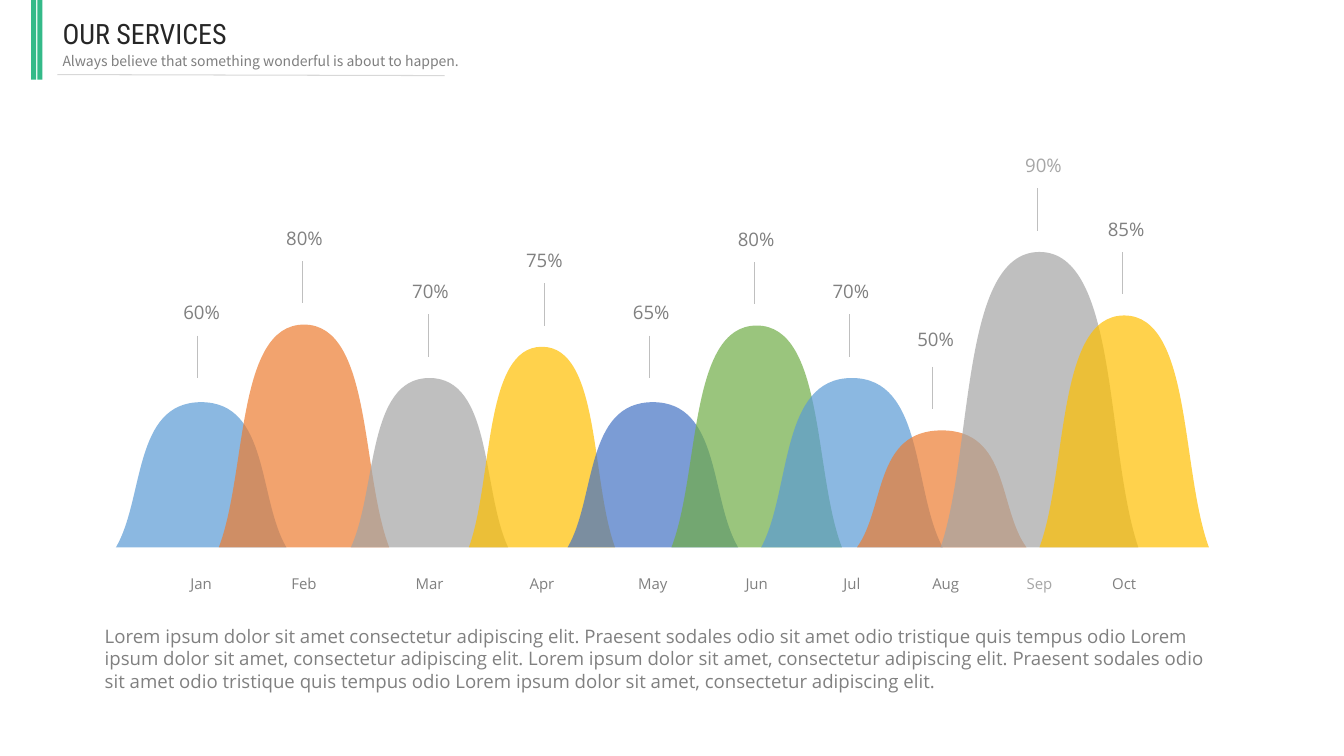
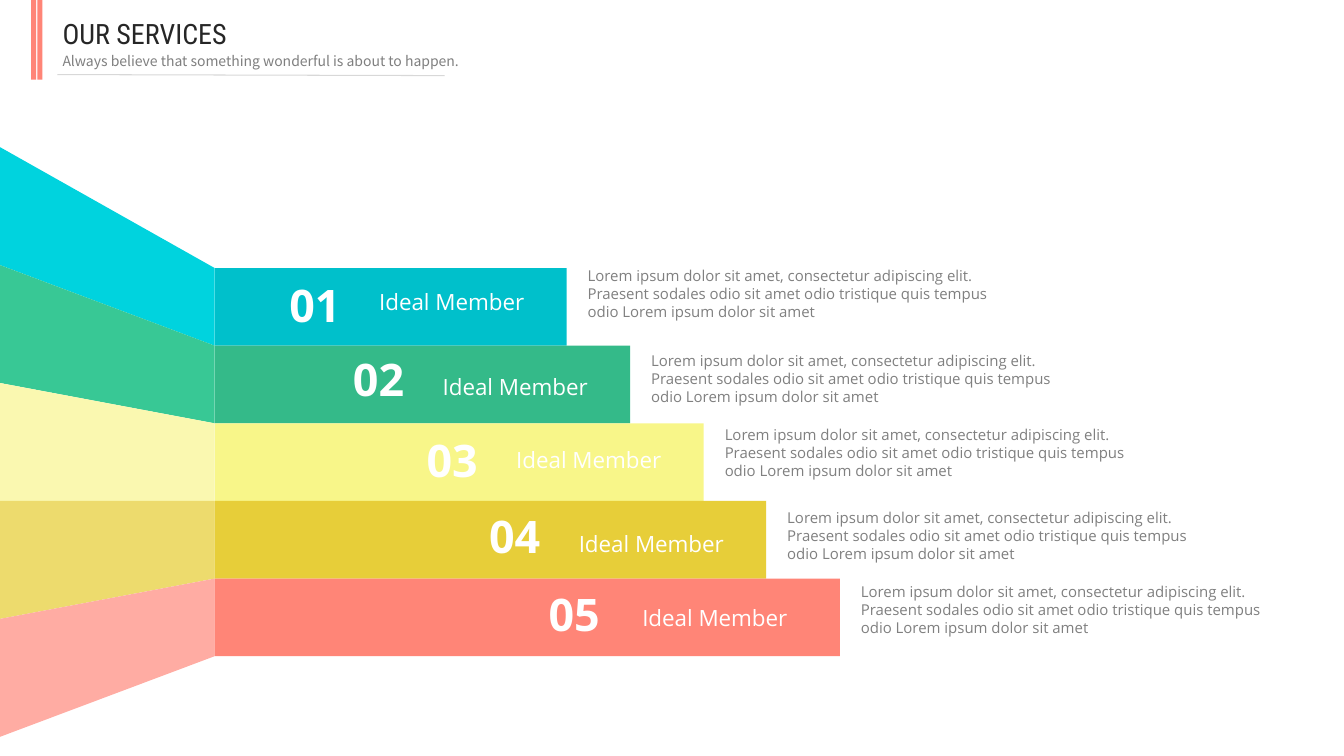
from dataclasses import dataclass

from pptx import Presentation
from pptx.dml.color import RGBColor
from pptx.enum.shapes import MSO_CONNECTOR, MSO_SHAPE
from pptx.enum.text import MSO_ANCHOR, MSO_AUTO_SIZE, PP_ALIGN
from pptx.oxml.ns import qn
from pptx.oxml.xmlchemy import OxmlElement
from pptx.util import Inches, Pt

GREY, PALE_GREY, WHITE = "808080", "A6A6A6", "FFFFFF"
BODY_FONT = "Open Sans"
MEMBER_TEXT = (
    "Lorem ipsum dolor sit amet, consectetur adipiscing elit. Praesent sodales "
    "odio sit amet odio tristique quis tempus odio Lorem ipsum dolor sit amet"
)
SERVICES_TEXT = (
    "Lorem ipsum dolor sit amet consectetur adipiscing elit. Praesent sodales odio "
    "sit amet odio tristique quis tempus odio Lorem ipsum dolor sit amet, consectetur "
    "adipiscing elit. Lorem ipsum dolor sit amet, consectetur adipiscing elit. "
    "Praesent sodales odio sit amet odio tristique quis tempus odio Lorem ipsum dolor "
    "sit amet, consectetur adipiscing elit."
)


@dataclass
class Peak:
    """One month's bell, measured from the left end of the base line."""
    month: str
    share: str
    hue: str
    left: float
    width: float
    height: float
    stalk_x: float
    share_x: float
    stalk_gap: float = 0.63
    share_gap: float = 0.41
    month_shift: float = 0
    ink: str = GREY


@dataclass
class Member:
    """One step of the staircase, with offsets from its bar."""
    hue: str
    fan_hue: str
    width: float
    text_drop: float
    number_drop: float
    name_back: float = 2.08
    number_back: float = 2.91


PEAKS = [
    Peak("Jan", "60%", "5B9BD5", 0, 1.69, 1.44, 0.81, 0.85, stalk_gap=0.66),
    Peak("Feb", "80%", "ED7D31", 1.02, 1.69, 2.21, 1.85, 1.87),
    Peak("Mar", "70%", "A5A5A5", 2.33, 1.56, 1.68, 3.10, 3.12),
    Peak("Apr", "75%", "FFC000", 3.50, 1.45, 1.99, 4.25, 4.25),
    Peak("May", "65%", "4472C4", 4.48, 1.69, 1.44, 5.29, 5.31, stalk_gap=0.66),
    Peak("Jun", "80%", "70AD47", 5.51, 1.69, 2.20, 6.33, 6.35),
    Peak("Jul", "70%", "5B9BD5", 6.40, 1.80, 1.68, 7.27, 7.29),
    Peak("Aug", "50%", "ED7D31", 7.35, 1.68, 1.16, 8.10, 8.13,
         share_gap=0.46, month_shift=0.04),
    Peak("Sep", "90%", "A5A5A5", 8.18, 1.96, 2.93, 9.14, 9.20, ink=PALE_GREY),
    Peak("Oct", "85%", "FFC000", 9.16, 1.68, 2.30, 9.98, 10.02),
]
MEMBERS = [
    Member("00C0CB", "00D3DE", 3.49, -0.06, 0.05),
    Member("34BA89", "38C895", 4.12, 0.01, 0.01),
    Member("F8F689", "FAF8B0", 4.85, -0.03, 0.04),
    Member("E7CE39", "EDDB6D", 5.47, 0.03, 0.03),
    Member("FF8577", "FFACA3", 6.20, -0.01, 0.03, 2.18, 3.05),
]


def rgb(hex_code):
    """Turn a hex string into a colour."""
    return RGBColor.from_string(hex_code)


def paint(shape, hue, opacity=100):
    """Give a shape a flat fill with no outline or shadow."""
    shape.shadow.inherit = False
    shape.line.fill.background()
    shape.fill.solid()
    shape.fill.fore_color.rgb = rgb(hue)
    if opacity < 100:
        alpha = OxmlElement("a:alpha")
        alpha.set("val", str(opacity * 1000))
        shape.element.spPr.find(".//" + qn("a:srgbClr")).append(alpha)


def write(frame, text, size, ink, font=BODY_FONT, align=PP_ALIGN.LEFT, bold=False):
    """Put one formatted run into a text frame."""
    frame.word_wrap = True
    frame.auto_size = MSO_AUTO_SIZE.NONE
    frame.vertical_anchor = MSO_ANCHOR.TOP
    paragraph = frame.paragraphs[0]
    paragraph.alignment = align
    paragraph.space_before = Pt(0)
    run = paragraph.add_run()
    run.text = text
    run.font.size, run.font.name, run.font.bold = Pt(size), font, bold
    run.font.color.rgb = rgb(ink)


def add_text(slide, box, text, size, ink, **style):
    """Add a text box at left, top, width, height."""
    frame = slide.shapes.add_textbox(*map(Inches, box)).text_frame
    write(frame, text, size, ink, **style)
    return frame


def add_bar(slide, box, hue):
    """Add a plain rectangle."""
    bar = slide.shapes.add_shape(MSO_SHAPE.RECTANGLE, *map(Inches, box))
    paint(bar, hue)


def add_rule(slide, start, end, hue, weight):
    """Add a thin straight line."""
    rule = slide.shapes.add_connector(MSO_CONNECTOR.STRAIGHT, *map(Inches, start + end))
    rule.line.color.rgb = rgb(hue)
    rule.line.width = Pt(weight)
    rule.element.spPr.append(OxmlElement("a:effectLst"))


def add_outline(slide, corners, hue, opacity=100):
    """Add a closed shape through the given corners."""
    points = [(Inches(x), Inches(y)) for x, y in corners]
    builder = slide.shapes.build_freeform(*points[0], scale=1.0)
    builder.add_line_segments(points[1:], close=True)
    outline = builder.convert_to_shape()
    paint(outline, hue, opacity)
    return outline


def add_bell(slide, left, base, width, height, hue):
    """Add a translucent bell by bending the two sides of a triangle."""
    corners = [(left, base), (left + width / 2, base - height), (left + width, base)]
    bell = add_outline(slide, corners, hue, opacity=70)
    bends = [[(1 / 6, 2 / 3), (0.1, 0)], [(0.9, 0), (5 / 6, 2 / 3)]]
    for side, controls in zip(list(bell.element.iter(qn("a:lnTo"))), bends):
        side.tag = qn("a:cubicBezTo")
        for position, (across, down) in enumerate(controls):
            control = OxmlElement("a:pt")
            control.set("x", str(round(Inches(width) * across)))
            control.set("y", str(round(Inches(height) * down)))
            side.insert(position, control)


def add_peak(slide, left, base, peak):
    """Draw a month's bell, its stalk and its two labels."""
    add_bell(slide, left + peak.left, base, peak.width, peak.height, peak.hue)
    stalk_x = left + peak.stalk_x
    stalk_top = base - peak.height - peak.stalk_gap
    month_x = left + peak.left + peak.width / 2 + peak.month_shift
    labels = [
        (peak.month, month_x, base + 0.2, 0.31, 10.7),
        (peak.share, left + peak.share_x, stalk_top - peak.share_gap, 0.36, 13.3),
    ]
    for text, center, top, height, size in labels:
        frame = add_text(slide, (center - 0.5, top, 1, height), text, size, peak.ink,
                         align=PP_ALIGN.CENTER)
        frame.margin_left = frame.margin_right = Inches(0.13)
        frame.margin_top = frame.margin_bottom = Inches(0.07)
    add_rule(slide, (stalk_x, stalk_top), (stalk_x, stalk_top + 0.42), "BFBFBF", 0.5)


def add_member(slide, left, top, height, number, member):
    """Draw one bar with its number, name and description."""
    right = left + member.width
    text_top = top + member.text_drop
    add_bar(slide, (left, top, member.width, height), member.hue)
    add_text(slide, (right + 0.11, text_top, 4.27, 0.64), MEMBER_TEXT, 10.7, GREY)
    add_text(slide, (right - member.name_back, text_top + 0.21, 1.88, 0.37),
             "Ideal Member", 16, WHITE, align=PP_ALIGN.CENTER)
    add_text(slide, (right - member.number_back, top + member.number_drop, 0.83, 0.64),
             f"{number:02d}", 32, WHITE, align=PP_ALIGN.CENTER, bold=True)


def add_staircase(slide, left, top, bar_height, fan_top, fan_height):
    """Draw the fan from the slide's edge and the bars it opens into."""
    for index, member in enumerate(MEMBERS):
        bar_top = top + index * bar_height
        edge_top = fan_top + index * fan_height
        add_outline(slide, [(0, edge_top), (0, edge_top + fan_height),
                            (left, bar_top + bar_height), (left, bar_top)], member.fan_hue)
    for index, member in enumerate(MEMBERS):
        add_member(slide, left, top + index * bar_height, bar_height, index + 1, member)


def add_header(slide, accent):
    """Fill the title and subtitle and add the stripes and rule."""
    title, subtitle = slide.placeholders
    lines = [
        (title, 0.11, 0.44, "OUR SERVICES", 20, "262626", "Roboto Condensed"),
        (subtitle, 0.47, 0.27,
         "Always believe that something wonderful is about to happen.",
         10, "7F7F7F", "Noto Sans CJK SC"),
    ]
    for holder, top, height, text, size, ink, font in lines:
        holder.left, holder.top = Inches(0.52), Inches(top)
        holder.width, holder.height = Inches(4.23), Inches(height)
        write(holder.text_frame, text, size, ink, font=font)
    layout = subtitle.text_frame.paragraphs[0]._p.get_or_add_pPr()
    layout.set("marL", "0")
    layout.set("indent", "0")
    layout.append(OxmlElement("a:buNone"))
    for left in (0.31, 0.37):
        add_bar(slide, (left, 0, 0.05, 0.79), accent)
    add_rule(slide, (0.57, 0.74), (4.41, 0.75), "D8D8D8", 0.75)


def new_slide(deck, accent):
    """Add a slide with the shared header."""
    slide = deck.slides.add_slide(deck.slide_layouts[1])
    add_header(slide, accent)
    return slide


def build_months(deck):
    """Build the slide of monthly bells."""
    slide = new_slide(deck, "34BA89")
    add_text(slide, (0.94, 6.15, 11.33, 0.77), SERVICES_TEXT, 13.3, GREY)
    for peak in PEAKS:
        add_peak(slide, 1.15, 5.43, peak)


def build_members(deck):
    """Build the slide of numbered members."""
    slide = new_slide(deck, "FF8577")
    add_staircase(slide, 2.13, 2.66, 0.77, 1.46, 1.17)


def main():
    """Build and save the deck."""
    deck = Presentation()
    deck.slide_width, deck.slide_height = Inches(13.33), Inches(7.5)
    build_months(deck)
    build_members(deck)
    deck.save("out.pptx")


if __name__ == "__main__":
    main()
